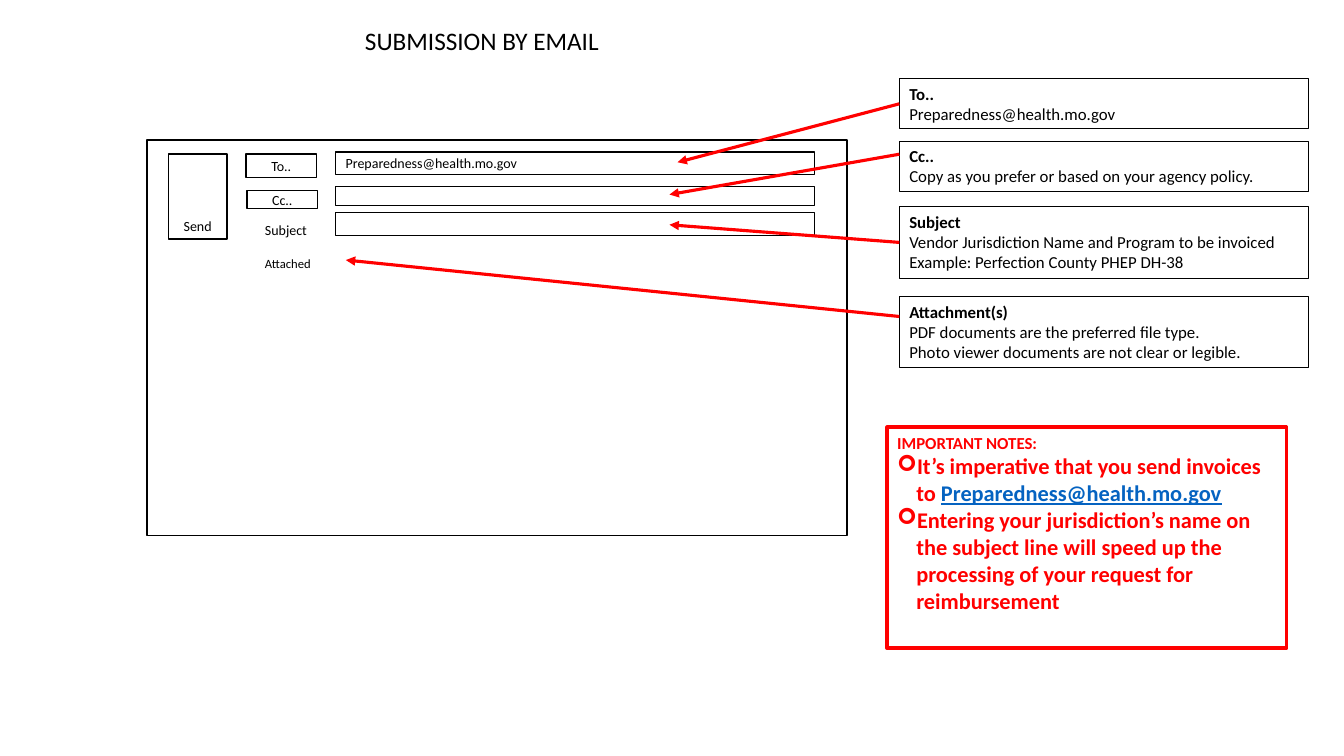
from pptx import Presentation
from pptx.dml.color import RGBColor
from pptx.enum.shapes import MSO_CONNECTOR, MSO_SHAPE
from pptx.enum.text import MSO_ANCHOR, PP_ALIGN
from pptx.oxml.ns import qn
from pptx.util import Inches, Pt
from lxml import etree

RECTANGLE, STRAIGHT = MSO_SHAPE.RECTANGLE, MSO_CONNECTOR.STRAIGHT
TOP, MIDDLE, BOTTOM = MSO_ANCHOR.TOP, MSO_ANCHOR.MIDDLE, MSO_ANCHOR.BOTTOM
LEFT, CENTER = PP_ALIGN.LEFT, PP_ALIGN.CENTER
BLACK = RGBColor(0, 0, 0)
RED = RGBColor(0xFF, 0, 0)
LINK_BLUE = RGBColor(0x05, 0x63, 0xC1)
CELL = Inches(0.1)  # side of one grid column and one grid row
LEFT_SIDE = 1
ADDRESS = "Preparedness@health.mo.gov"

deck = Presentation()
deck.slide_width, deck.slide_height = Inches(13.33), Inches(7.5)
page = deck.slides.add_slide(deck.slide_layouts[5])


def add_box(place, line_width, line_color=BLACK, anchor=TOP):
    """Add an unfilled rectangle at (column, row, columns, rows)."""
    box = page.shapes.add_shape(RECTANGLE, *(round(n * CELL) for n in place))
    box.shadow.inherit = False
    box.fill.background()
    if line_width:
        box.line.color.rgb = line_color
        box.line.width = Pt(line_width)
    else:
        box.line.fill.background()
    box.text_frame.word_wrap = True
    box.text_frame.vertical_anchor = anchor
    return box


def write(para, text, align=LEFT, color=BLACK, **formats):
    """Add a run of Calibri text to a paragraph."""
    para.alignment = align
    span = para.add_run()
    span.text = text
    span.font.color.rgb = color
    for name, value in {"name": "Calibri", **formats}.items():
        setattr(span.font, name, value)


# Title
title = page.shapes.title
for name, value in zip(("left", "top", "width", "height"), (13.9, 2, 67.8, 4)):
    setattr(title, name, round(value * CELL))
title.text_frame.vertical_anchor = TOP
write(title.text_frame.paragraphs[0], "SUBMISSION BY EMAIL", CENTER, size=Pt(18))

# Email window with its buttons, labels and fields
add_box((14.6, 13.9, 69.4, 39.2), 1)
FIELD_LEFT, FIELD_WIDTH = 33.3, 47.5
email_parts = [
    ("To..", (24.4, 15.3, 7, 2.3), 1, MIDDLE, CENTER, 10),
    ("Cc..", (24.5, 18.9, 7, 1.8), 1, MIDDLE, CENTER, 10),
    ("Send", (16.7, 15.3, 5.8, 8.4), 1, BOTTOM, CENTER, 10),
    ("Subject", (25.3, 21.9, 7, 1.8), 0, MIDDLE, LEFT, 10),
    ("Attached", (25.3, 25, 7, 2.3), 0, MIDDLE, LEFT, 9),
    (ADDRESS, (FIELD_LEFT, 15.1, FIELD_WIDTH, 2.2), 1, MIDDLE, LEFT, 10),
    ("", (FIELD_LEFT, 18.5, FIELD_WIDTH, 1.9), 1, MIDDLE, LEFT, 10),
    ("", (FIELD_LEFT, 21.1, FIELD_WIDTH, 2.3), 1, MIDDLE, LEFT, 10),
]
for text, place, line_width, anchor, align, size in email_parts:
    part = add_box(place, line_width, anchor=anchor)
    if text:
        write(part.text_frame.paragraphs[0], text, align, size=Pt(size))

# Callouts, each with an arrow to its part of the email;
# an arrow row of None starts at the middle of the callout's left side
CALLOUT_LEFT, CALLOUT_WIDTH = 89.2, 40.6
callouts = [
    (7.8, 5, None, (67.2, 16.1), ["To..", ADDRESS]),
    (14, 5, 15.3, (66.4, 19.3),
     ["Cc..", "Copy as you prefer or based on your agency policy."]),
    (20.5, 7.1, None, (66.4, 22.3),
     ["Subject", "Vendor Jurisdiction Name and Program to be invoiced",
      "Example: Perfection County PHEP DH-38"]),
    (29.4, 7.1, 31.4, (34.3, 25.8),
     ["Attachment(s)", "PDF documents are the preferred file type.",
      "Photo viewer documents are not clear or legible."]),
]
for top, height, arrow_row, target, lines in callouts:
    callout = add_box((CALLOUT_LEFT, top, CALLOUT_WIDTH, height), 0.75)
    frame = callout.text_frame
    for index, text in enumerate(lines):
        para = frame.add_paragraph() if index else frame.paragraphs[0]
        write(para, text, size=Pt(12), bold=index == 0)

    ends = (CALLOUT_LEFT, arrow_row or top + height / 2, *target)
    arrow = page.shapes.add_connector(STRAIGHT, *(round(n * CELL) for n in ends))
    if arrow_row is None:
        arrow.begin_connect(callout, LEFT_SIDE)
    arrow.line.color.rgb = RED
    arrow.line.width = Pt(2.25)
    etree.SubElement(arrow.line._get_or_add_ln(), qn("a:tailEnd"), type="triangle")
    etree.SubElement(arrow._element.spPr, qn("a:effectLst"))

# Important notes
notes = add_box((88, 42.4, 39.6, 21.9), 2.75, RED).text_frame
write(notes.paragraphs[0], "IMPORTANT NOTES:", color=RED, size=Pt(12), bold=True)
bullets = [
    [("It’s imperative that you send invoices to ", RED, False),
     (ADDRESS, LINK_BLUE, True)],
    [("Entering your jurisdiction’s name on the subject line will speed up "
      "the processing of your request for reimbursement", RED, False)],
]
INDENT = Inches(0.19)
for spans in bullets:
    para = notes.add_paragraph()
    for text, color, underline in spans:
        write(para, text, color=color, size=Pt(16), bold=True, underline=underline)
    properties = para._p.get_or_add_pPr()
    properties.set("marL", str(INDENT))
    properties.set("indent", str(-INDENT))
    etree.SubElement(properties, qn("a:buFont"), typeface="Wingdings")
    etree.SubElement(properties, qn("a:buChar"), char="➢")

deck.save("out.pptx")
